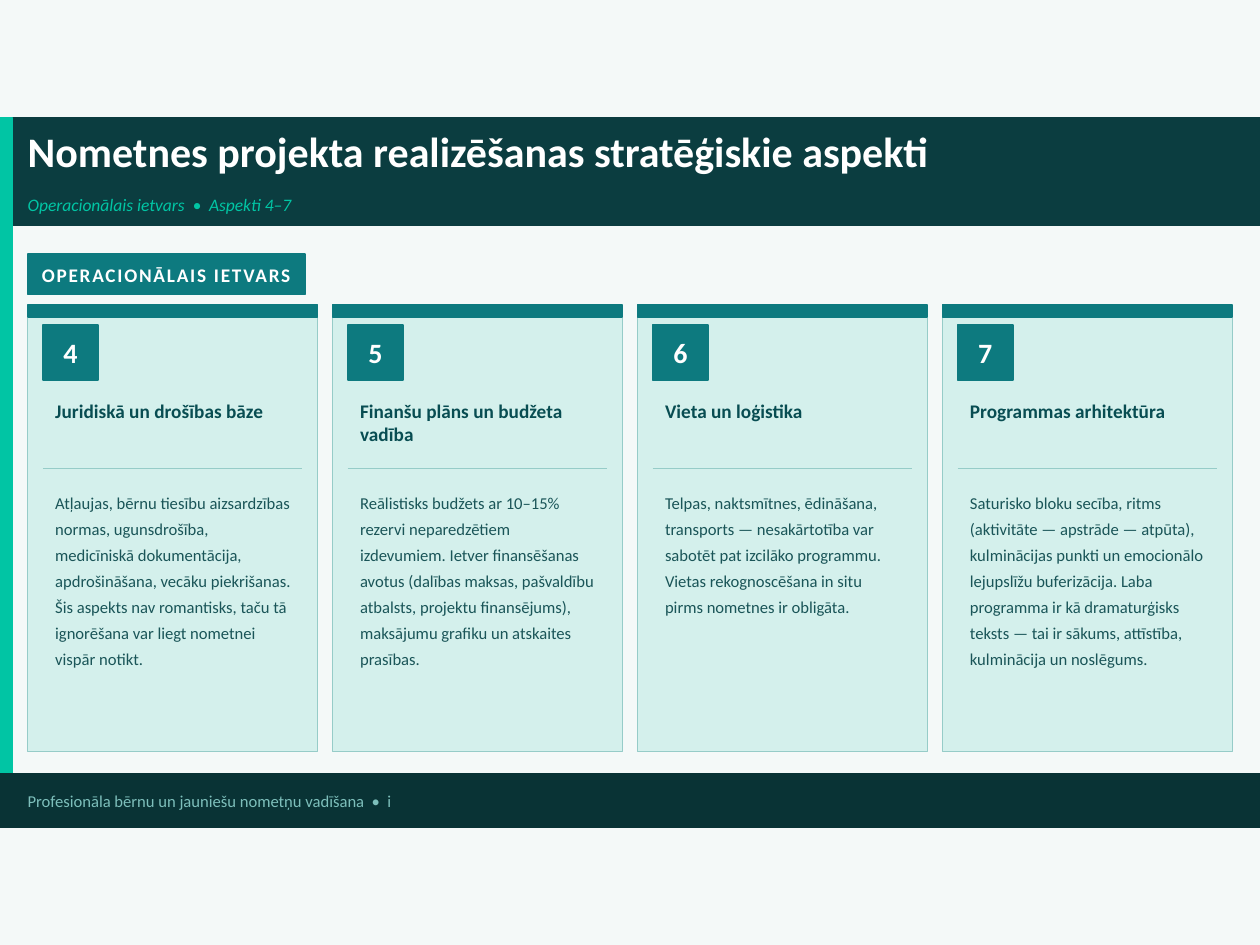
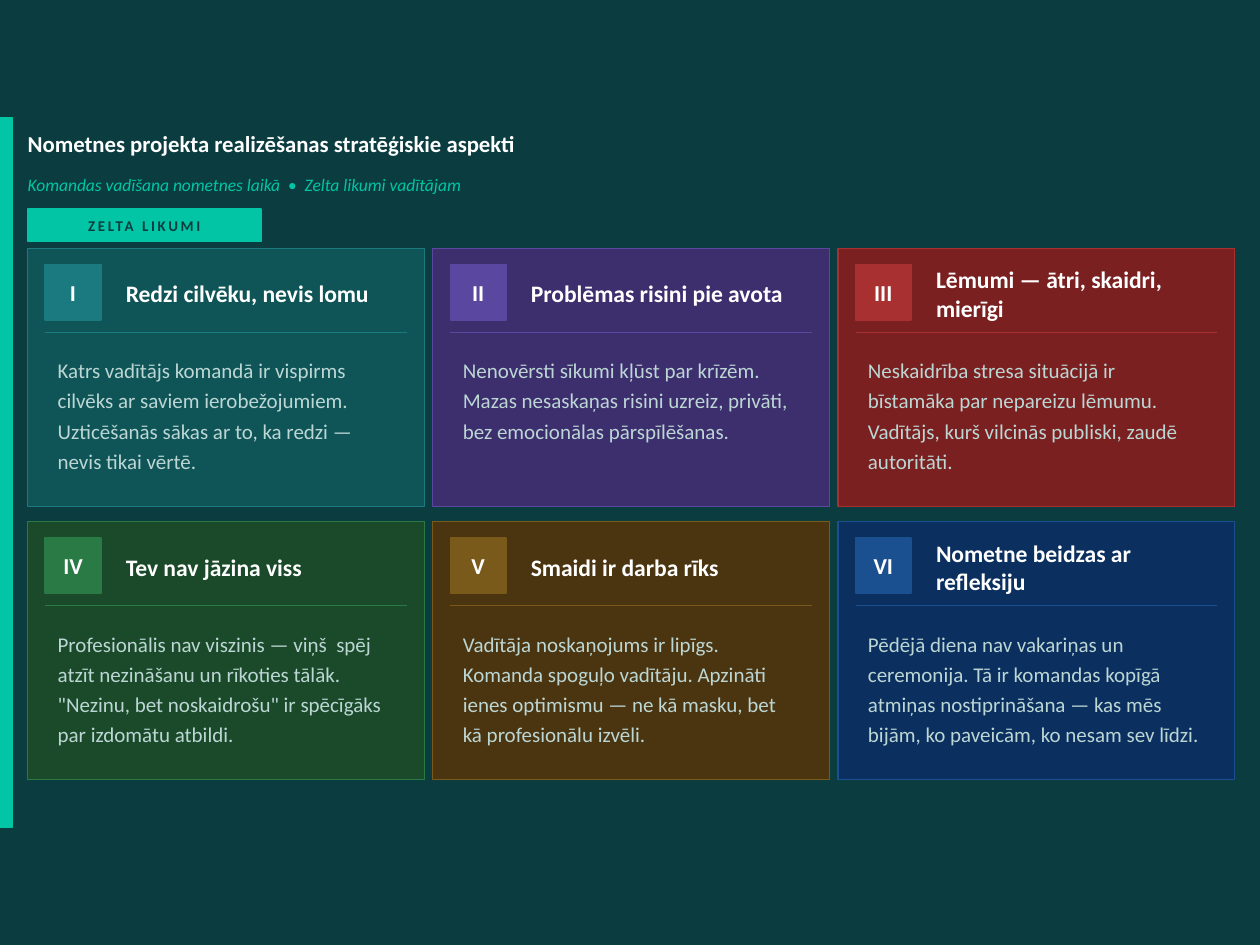
import pptx
import pptx.dml.color
import pptx.enum.shapes
import pptx.enum.text
import pptx.oxml
import pptx.util

Pt = pptx.util.Pt
hue = pptx.dml.color.RGBColor.from_string
ALIGN = pptx.enum.text.PP_ALIGN
MID = pptx.enum.text.MSO_ANCHOR.MIDDLE
TOP = pptx.enum.text.MSO_ANCHOR.TOP

DARK, MINT, TEAL, WHITE = "0B3D40", "01C5A4", "0D7A7F", "FFFFFF"
PALE, EDGE = "D4F0EC", "96CCC8"
LEFT, WIDE, HIGH = 15.84, 720, 540
BAND, SPAN = 67.5, 405  # top and height of the 16:9 area
BADGE = 31.68


def rect(slide, x, y, w, h, fill, line=None, width=1):
    shape = slide.shapes.add_shape(
        pptx.enum.shapes.MSO_SHAPE.RECTANGLE, Pt(x), Pt(y), Pt(w), Pt(h))
    shape.shadow.inherit = False
    shape.fill.solid()
    shape.fill.fore_color.rgb = hue(fill)
    shape.line.color.rgb = hue(line or fill)
    shape.line.width = Pt(width)
    return shape


def write(shape, text, size, color, bold=False, italic=False, align=ALIGN.LEFT,
          anchor=MID, inset=False, space=1.0, track=0):
    """Fill a shape with one styled paragraph; track is letter spacing in points."""
    frame = shape.text_frame
    frame.text = text
    frame.word_wrap = True
    frame.auto_size = pptx.enum.text.MSO_AUTO_SIZE.NONE
    frame.vertical_anchor = anchor
    frame.margin_left = frame.margin_right = Pt(7.2 if inset else 0)
    frame.margin_top = frame.margin_bottom = Pt(3.6 if inset else 0)
    para = frame.paragraphs[0]
    para.alignment = align
    para.line_spacing = space
    font = para.runs[0].font
    font.name, font.size = "Calibri", Pt(size)
    font.bold, font.italic = bold, italic
    font.color.rgb = hue(color)
    if track:
        para.runs[0]._r.get_or_add_rPr().set("spc", str(int(track * 100)))


deck = pptx.Presentation()
deck.slide_width, deck.slide_height = Pt(WIDE), Pt(HIGH)

# Shared header: backdrop, title height and size, subtitle height and text,
# then the tag's top, width, height, fill, ink, size, tracking and text
heads = [
    ("F4F9F8", 37.44, 24, 23.76, "Operacionālais ietvars  •  Aspekti 4–7",
     (145.3, 158.4, 23.04, TEAL, WHITE, 11, 1, "OPERACIONĀLAIS IETVARS")),
    (DARK, 28.8, 13, 18, "Komandas vadīšana nometnes laikā  •  Zelta likumi vadītājam",
     (119.4, 133.2, 18.72, MINT, DARK, 8.5, 1.5, "ZELTA LIKUMI")),
]
pages = []
for back, high, size, low, sub, tag in heads:
    slide = deck.slides.add_slide(deck.slide_layouts[5])
    pages.append(slide)
    slide.background.fill.solid()
    slide.background.fill.fore_color.rgb = hue(back)
    rect(slide, 0, BAND, WIDE, high + low, DARK)
    stripe = rect(slide, 0, BAND, 7.2, SPAN, MINT)

    title = slide.shapes.title
    title.left, title.top = Pt(LEFT), Pt(BAND)
    title.width, title.height = Pt(691.2), Pt(high)
    write(title, "Nometnes projekta realizēšanas stratēģiskie aspekti",
          size, WHITE, bold=True)
    stripe.element.addnext(title.element)  # lift the title above the band

    line = slide.shapes.add_textbox(Pt(LEFT), Pt(BAND + high), Pt(691.2), Pt(low))
    write(line, sub, 10, MINT, italic=True)

    top, wide, tall, fill, ink, size, track, text = tag
    label = rect(slide, LEFT, top, wide, tall, fill)
    write(label, text, size, ink, bold=True, align=ALIGN.CENTER, track=track)

frame, laws = pages
rules = []

# Operational framework: four columns
foot = rect(frame, 0, 442.26, WIDE, 30.24, "093335")
write(foot, "Profesionāla bērnu un jauniešu nometņu vadīšana  •  i", 9.5, "7DBFBB")
foot.text_frame.margin_left = Pt(LEFT)

parts = [
    ("Juridiskā un drošības bāze",
     "Atļaujas, bērnu tiesību aizsardzības normas, ugunsdrošība, medicīniskā "
     "dokumentācija, apdrošināšana, vecāku piekrišanas. Šis aspekts nav romantisks, "
     "taču tā ignorēšana var liegt nometnei vispār notikt."),
    ("Finanšu plāns un budžeta vadība",
     "Reālistisks budžets ar 10–15% rezervi neparedzētiem izdevumiem. Ietver "
     "finansēšanas avotus (dalības maksas, pašvaldību atbalsts, projektu "
     "finansējums), maksājumu grafiku un atskaites prasības."),
    ("Vieta un loģistika",
     "Telpas, naktsmītnes, ēdināšana, transports — nesakārtotība var sabotēt pat "
     "izcilāko programmu. Vietas rekognoscēšana in situ pirms nometnes ir obligāta."),
    ("Programmas arhitektūra",
     "Saturisko bloku secība, ritms (aktivitāte — apstrāde — atpūta), kulminācijas "
     "punkti un emocionālo lejupslīžu buferizācija. Laba programma ir kā "
     "dramaturģisks teksts — tai ir sākums, attīstība, kulminācija un noslēgums."),
]
y = 174.1
for i, (name, body) in enumerate(parts):
    x = LEFT + i * 174.24
    pad = x + 8.64
    rect(frame, x, y, 165.6, 255.6, PALE, EDGE, 0.6)
    rect(frame, x, y, 165.6, 7.2, TEAL)
    badge = rect(frame, pad, y + 11.52, BADGE, BADGE, TEAL)
    write(badge, str(i + 4), 16, WHITE, bold=True, align=ALIGN.CENTER)
    head = frame.shapes.add_textbox(Pt(pad), Pt(y + 50.4), Pt(149), Pt(37.44))
    write(head, name, 11, "084D52", bold=True, anchor=TOP, inset=True)
    rules.append((frame, pad, y + 93.4, 148.32, EDGE))
    note = frame.shapes.add_textbox(Pt(pad), Pt(y + 100.8), Pt(149), Pt(145.44))
    write(note, body, 9.5, "1A5558", anchor=TOP, inset=True, space=1.3)

# Golden rules: three by two cards
cards = [
    ("I", "0F5558", "1A7A7F", "Redzi cilvēku, nevis lomu",
     "Katrs vadītājs komandā ir vispirms cilvēks ar saviem ierobežojumiem. "
     "Uzticēšanās sākas ar to, ka redzi — nevis tikai vērtē."),
    ("II", "3D2E6E", "5A47A0", "Problēmas risini pie avota",
     "Nenovērsti sīkumi kļūst par krīzēm. Mazas nesaskaņas risini uzreiz, privāti, "
     "bez emocionālas pārspīlēšanas."),
    ("III", "7A2020", "A83030", "Lēmumi — ātri, skaidri, mierīgi",
     "Neskaidrība stresa situācijā ir bīstamāka par nepareizu lēmumu. Vadītājs, "
     "kurš vilcinās publiski, zaudē autoritāti."),
    ("IV", "1A4A2A", "2A7A45", "Tev nav jāzina viss",
     "Profesionālis nav viszinis — viņš  spēj atzīt nezināšanu un rīkoties tālāk. "
     "\"Nezinu, bet noskaidrošu\" ir spēcīgāks par izdomātu atbildi."),
    ("V", "4A3510", "7A5A1A", "Smaidi ir darba rīks",
     "Vadītāja noskaņojums ir lipīgs. Komanda spoguļo vadītāju. Apzināti ienes "
     "optimismu — ne kā masku, bet kā profesionālu izvēli."),
    ("VI", "0B3060", "1A5090", "Nometne beidzas ar refleksiju",
     "Pēdējā diena nav vakariņas un ceremonija. Tā ir komandas kopīgā atmiņas "
     "nostiprināšana — kas mēs bijām, ko paveicām, ko nesam sev līdzi."),
]
for i, (mark, fill, edge, name, body) in enumerate(cards):
    x = LEFT + i % 3 * 231.5
    y = 141.8 + i // 3 * 156.24
    pad = x + 10.08
    rect(laws, x, y, 226.8, 147.6, fill, edge, 0.7)
    badge = rect(laws, pad, y + 9.36, BADGE, BADGE, edge)
    write(badge, mark, 13, WHITE, bold=True, align=ALIGN.CENTER)
    head = laws.shapes.add_textbox(Pt(x + 48.96), Pt(y + 7.92), Pt(170.64), Pt(36))
    write(head, name, 13.5, WHITE, bold=True, inset=True)
    rules.append((laws, pad, y + 48.24, 206.64, edge))
    note = laws.shapes.add_textbox(Pt(pad), Pt(y + 56.16), Pt(206.64), Pt(84.96))
    write(note, body, 12, "BCD6D4", anchor=TOP, inset=True, space=1.2)

# Thin rules under the card heads
for slide, x, y, wide, color in rules:
    rule = slide.shapes.add_connector(
        pptx.enum.shapes.MSO_CONNECTOR.STRAIGHT, Pt(x), Pt(y), Pt(x + wide), Pt(y))
    rule.line.color.rgb = hue(color)
    rule.line.width = Pt(0.5)
    rule.element.spPr.append(pptx.oxml.parse_xml(
        '<a:effectLst xmlns:a="http://schemas.openxmlformats.org/drawingml/2006/main"/>'))

deck.save("out.pptx")
